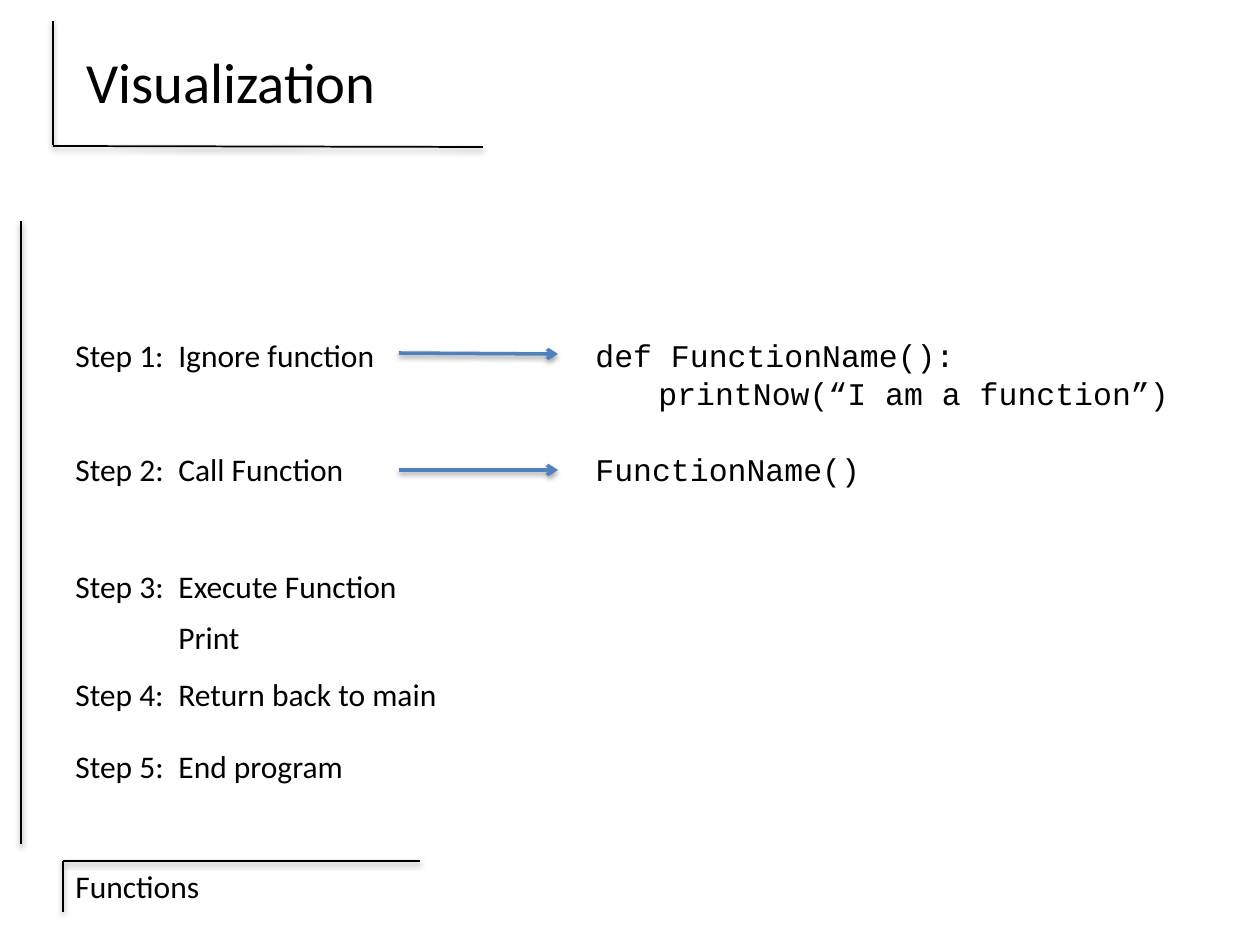
from lxml.etree import SubElement
from pptx import Presentation
from pptx.dml.color import RGBColor
from pptx.enum.shapes import MSO_CONNECTOR
from pptx.enum.text import MSO_ANCHOR, MSO_AUTO_SIZE, PP_ALIGN
from pptx.oxml import parse_xml
from pptx.oxml.ns import nsdecls, qn
from pptx.util import Pt

PX = 914400 / 126
BLACK = "000000"
BLUE = "4F81BD"
TEXT_LEFT = 63
TEXT_HEIGHT = 50
STEP_TAB = 103
CODE_INDENT = 63
SHADOW = (
    f'<a:effectLst {nsdecls("a")}>'
    '<a:outerShdw blurRad="40000" dist="20000" dir="5400000" rotWithShape="0">'
    '<a:srgbClr val="000000"><a:alpha val="38000"/></a:srgbClr>'
    '</a:outerShdw></a:effectLst>'
)
RULES = [
    (420, 861, 63, 861),
    (21, 221, 21, 844),
    (63, 861, 63, 912),
    (483, 147, 53, 146),
    (53, 21, 53, 145),
]
STEPS = [
    ("Step 1:\tIgnore function", 330, 328),
    ("Step 2:\tCall Function", 444, 296),
    ("Step 3:\tExecute Function", 561, 349),
    ("Step 4:\tReturn back to main", 669, 390),
    ("Step 5:\tEnd program", 741, 295),
]
ARROWS = [(353, 354), (470, 470)]
CODE = [
    ("def FunctionName():", 0, 0),
    ("printNow(“I am a function”)", CODE_INDENT, 0),
    ("FunctionName()", 0, 22),
]


def emu(pixels):
    """Turn pixels into EMU."""
    return round(pixels * PX)


def color(value):
    """Return the colour for a hex string."""
    return RGBColor.from_string(value)


def add_run(paragraph, text, font="Calibri", size=18):
    """Add one formatted run of black text."""
    run = paragraph.add_run()
    run.text = text
    run.font.name = font
    run.font.size = Pt(size)
    run.font.color.rgb = color(BLACK)


def add_frame(slide, left, top, width, height):
    """Add an empty wrapping text box and return its text frame."""
    shape = slide.shapes.add_textbox(emu(left), emu(top), emu(width), emu(height))
    shape.text_frame.word_wrap = True
    return shape.text_frame


def add_label(slide, text, left, top, width):
    """Add a one-line label, with a tab stop after the step number."""
    paragraph = add_frame(slide, left, top, width, TEXT_HEIGHT).paragraphs[0]
    add_run(paragraph, text)
    if "\t" in text:
        tabs = SubElement(paragraph._p.get_or_add_pPr(), qn("a:tabLst"))
        SubElement(tabs, qn("a:tab"), pos=str(emu(STEP_TAB)), algn="l")


def add_code(slide):
    """Add the code listing with its indented function body."""
    frame = add_frame(slide, 583, 330, 605, 165)
    for index, (text, indent, space) in enumerate(CODE):
        paragraph = frame.add_paragraph() if index else frame.paragraphs[0]
        paragraph.space_before = Pt(space)
        paragraph._p.get_or_add_pPr().set("marL", str(emu(indent)))
        add_run(paragraph, text, "Courier New")


def add_line(slide, start_x, start_y, end_x, end_y, line_color=BLACK, width=1, arrow=False):
    """Add a shadowed straight line, with an arrowhead if asked."""
    connector = slide.shapes.add_connector(
        MSO_CONNECTOR.STRAIGHT, emu(start_x), emu(start_y), emu(end_x), emu(end_y))
    connector.line.color.rgb = color(line_color)
    connector.line.width = Pt(width)
    if arrow:
        SubElement(connector.line._get_or_add_ln(), qn("a:tailEnd"), type="arrow")
    connector._element.spPr.append(parse_xml(SHADOW))


def set_title(slide, text):
    """Place and format the title placeholder."""
    title = slide.shapes.title
    title.left, title.top = emu(63), emu(21)
    title.width, title.height = emu(336), emu(120)
    frame = title.text_frame
    frame.auto_size = MSO_AUTO_SIZE.NONE
    frame.vertical_anchor = MSO_ANCHOR.MIDDLE
    frame.paragraphs[0].alignment = PP_ALIGN.CENTER
    add_run(frame.paragraphs[0], text, size=32.4)


def main():
    """Build the slide and save it."""
    presentation = Presentation()
    presentation.slide_width, presentation.slide_height = emu(1260), emu(945)
    slide = presentation.slides.add_slide(presentation.slide_layouts[5])
    for rule in RULES:
        add_line(slide, *rule)
    add_label(slide, "Functions", TEXT_LEFT, 861, 305)
    set_title(slide, "Visualization")
    add_code(slide)
    for start_y, end_y in ARROWS:
        add_line(slide, 399, start_y, 558, end_y, BLUE, 2, arrow=True)
    for text, top, width in STEPS:
        add_label(slide, text, TEXT_LEFT, top, width)
    add_label(slide, "Print", TEXT_LEFT + STEP_TAB, 612, 87)
    presentation.save("out.pptx")


if __name__ == "__main__":
    main()
